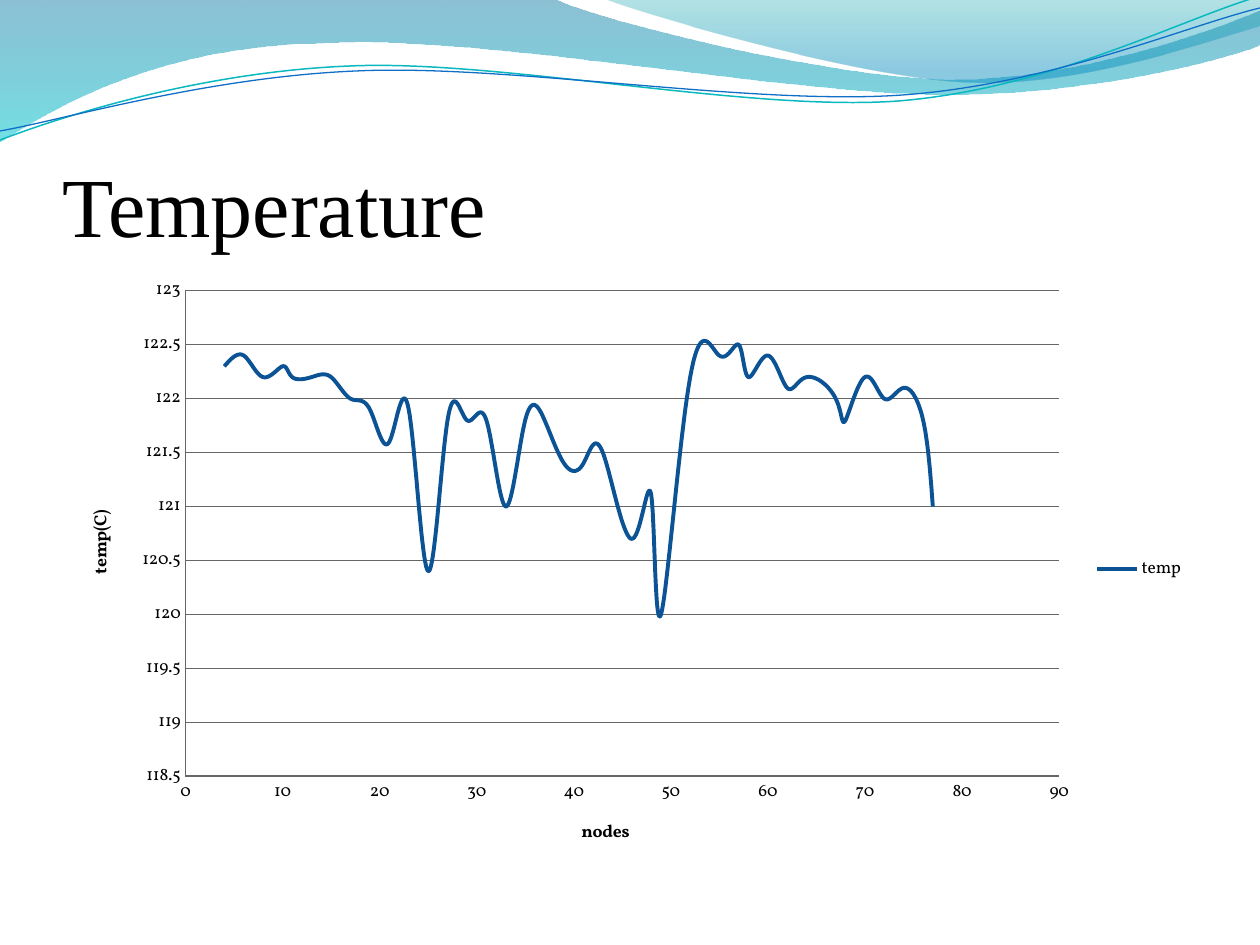
from pptx import Presentation
from pptx import util as u
from pptx.chart import data as d
from pptx.dml import color as c
from pptx.enum import chart as ch, text
from pptx.oxml import ns, parse_xml

SCALE = 914400 / 126
UPPER_WAVE = [(0, 0), (554, -1), (600, 21, 837, 79, 955, 79),
              (1075, 79, 1207, 33, 1260, 11), (1261, 45),
              (1239, 55, 1096, 96, 940, 94), (784, 94, 481, 35, 324, 43),
              (163, 45, 58, 105, -1, 142)]
RIGHT_WAVE = [(604, -1), (641, 14, 859, 78, 969, 82),
              (1079, 87, 1211, 40, 1260, 26), (1260, 0)]
TEAL_CURVE = [(0, 140), (60, 117, 199, 72, 349, 66),
              (498, 59, 747, 112, 898, 101), (1049, 89, 1182, 19, 1257, -3)]
BLUE_CURVE = [(0, 131), (59, 121, 207, 77, 357, 71),
              (508, 64, 752, 106, 903, 95), (1053, 84, 1186, 26, 1260, 8)]
READINGS = [
    (4, 122.3), (6, 122.4), (8, 122.2), (10, 122.3), (11, 122.2), (13, 122.2),
    (15, 122.2), (17, 122), (19, 121.9), (21, 121.6), (23, 121.9), (25, 120.4),
    (27, 121.8), (29, 121.8), (31, 121.8), (33, 121), (35, 121.8), (37, 121.8),
    (39, 121.4), (41, 121.4), (43, 121.5), (46, 120.7), (48, 121.1), (49, 120),
    (52, 122.2), (55, 122.4), (57, 122.5), (58, 122.2), (60, 122.4),
    (62, 122.1), (64, 122.2), (67, 122), (68, 121.8), (70, 122.2), (72, 122),
    (74, 122.1), (76, 121.8), (77, 121)]


def px(length):
    """Turn pixels into EMU."""
    return u.Emu(round(length * SCALE))


def rgb(value):
    """Turn a hex string into a colour."""
    return c.RGBColor.from_string(value)


def bend(shape, segments):
    """Join each three lines of a cubic segment into one Bezier curve."""
    lines = iter(shape.element.findall(".//" + ns.qn("a:lnTo")))
    for segment in segments[1:]:
        first = next(lines)
        if len(segment) == 2:
            continue
        curve = parse_xml(f'<a:cubicBezTo {ns.nsdecls("a")}/>')
        first.addprevious(curve)
        for line in (first, next(lines), next(lines)):
            curve.append(line[0])
            line.getparent().remove(line)


def add_outline(page, segments, closed):
    """Add a freeform that follows straight and cubic segments."""
    points = [(px(segment[i]), px(segment[i + 1]))
              for segment in segments for i in range(0, len(segment), 2)]
    builder = page.shapes.build_freeform(*points[0], scale=1.0)
    builder.add_line_segments(points[1:], close=closed)
    shape = builder.convert_to_shape()
    bend(shape, segments)
    shape.shadow.inherit = False
    return shape


def add_wave(page, segments, stops):
    """Add a wave filled from top to bottom with see-through colours."""
    shape = add_outline(page, segments, True)
    shape.line.fill.background()
    shape.fill.gradient()
    shape.fill.gradient_angle = 270
    for stop, (position, value, _) in zip(shape.fill.gradient_stops, stops):
        stop.position = position
        stop.color.rgb = rgb(value)
    colours = shape.element.spPr.findall(".//" + ns.qn("a:srgbClr"))
    for colour, (_, _, opacity) in zip(colours, stops):
        colour.append(parse_xml(
            f'<a:alpha {ns.nsdecls("a")} val="{opacity * 1000}"/>'))


def add_curve(page, segments, value, width):
    """Add a thin open curve."""
    shape = add_outline(page, segments, False)
    shape.fill.background()
    shape.line.color.rgb = rgb(value)
    shape.line.width = u.Pt(width)


def style_font(font, name, size, bold=False):
    """Set black type in the given face and size."""
    font.name, font.size, font.bold = name, u.Pt(size), bold
    font.color.rgb = rgb("000000")


def add_heading(page, words):
    """Add the slide heading."""
    box = page.shapes.add_textbox(px(63), px(97), px(1134), px(157))
    frame = box.text_frame
    frame.word_wrap = True
    frame.vertical_anchor = text.MSO_ANCHOR.BOTTOM
    frame.margin_left = frame.margin_right = frame.margin_bottom = 0
    frame.margin_top = px(6)
    span = frame.paragraphs[0].add_run()
    span.text = words
    style_font(span.font, "Times New Roman", 48)


def style_line(line, value, width):
    """Set the colour and width of a chart line."""
    line.color.rgb = rgb(value)
    line.width = u.Pt(width)


def style_axis(axis, title, low, high, step):
    """Set the range, title and line of an axis."""
    axis.minimum_scale, axis.maximum_scale = low, high
    axis.major_unit = step
    axis.major_tick_mark = axis.minor_tick_mark = ch.XL_TICK_MARK.NONE
    style_line(axis.format.line, "666666", 0.75)
    span = axis.axis_title.text_frame.paragraphs[0].add_run()
    span.text = title
    style_font(span.font, "Vollkorn", 10, True)


def add_temperature_chart(page):
    """Add the smooth scatter chart of temperature by node."""
    values = d.XyChartData()
    series = values.add_series("temp")
    for node, degrees in READINGS:
        series.add_data_point(node, degrees)
    chart = page.shapes.add_chart(
        ch.XL_CHART_TYPE.XY_SCATTER_SMOOTH_NO_MARKERS,
        px(63), px(267), px(1134), px(605), values).chart
    style_font(chart.font, "Vollkorn", 10)
    chart.has_title = False
    chart.has_legend = True
    chart.legend.position = ch.XL_LEGEND_POSITION.RIGHT
    chart.legend.include_in_layout = False
    style_axis(chart.category_axis, "nodes", 0, 90, 10)
    style_axis(chart.value_axis, "temp(C)", 118.5, 123, 0.5)
    chart.category_axis.has_major_gridlines = False
    chart.value_axis.has_major_gridlines = True
    style_line(chart.value_axis.major_gridlines.format.line, "666666", 0.75)
    plot = chart.plots[0]
    plot.vary_by_categories = False
    style_line(plot.series[0].format.line, "0B5395", 2.25)
    for smooth in chart.element.iter(ns.qn("c:smooth")):
        smooth.set("val", "1")


def main():
    """Build and save the temperature slide."""
    deck = Presentation()
    deck.slide_width, deck.slide_height = px(1260), px(945)
    page = deck.slides.add_slide(deck.slide_layouts[6])
    add_wave(page, UPPER_WAVE, [(0, "0074A1", 45), (1, "00C6CF", 55)])
    add_wave(page, RIGHT_WAVE, [(0, "00A1A9", 30), (0.8, "008BBF", 45)])
    add_curve(page, TEAL_CURVE, "0AB8BF", 0.85)
    add_curve(page, BLUE_CURVE, "0F6FC6", 0.75)
    add_heading(page, "Temperature")
    add_temperature_chart(page)
    deck.save("out.pptx")


if __name__ == "__main__":
    main()
